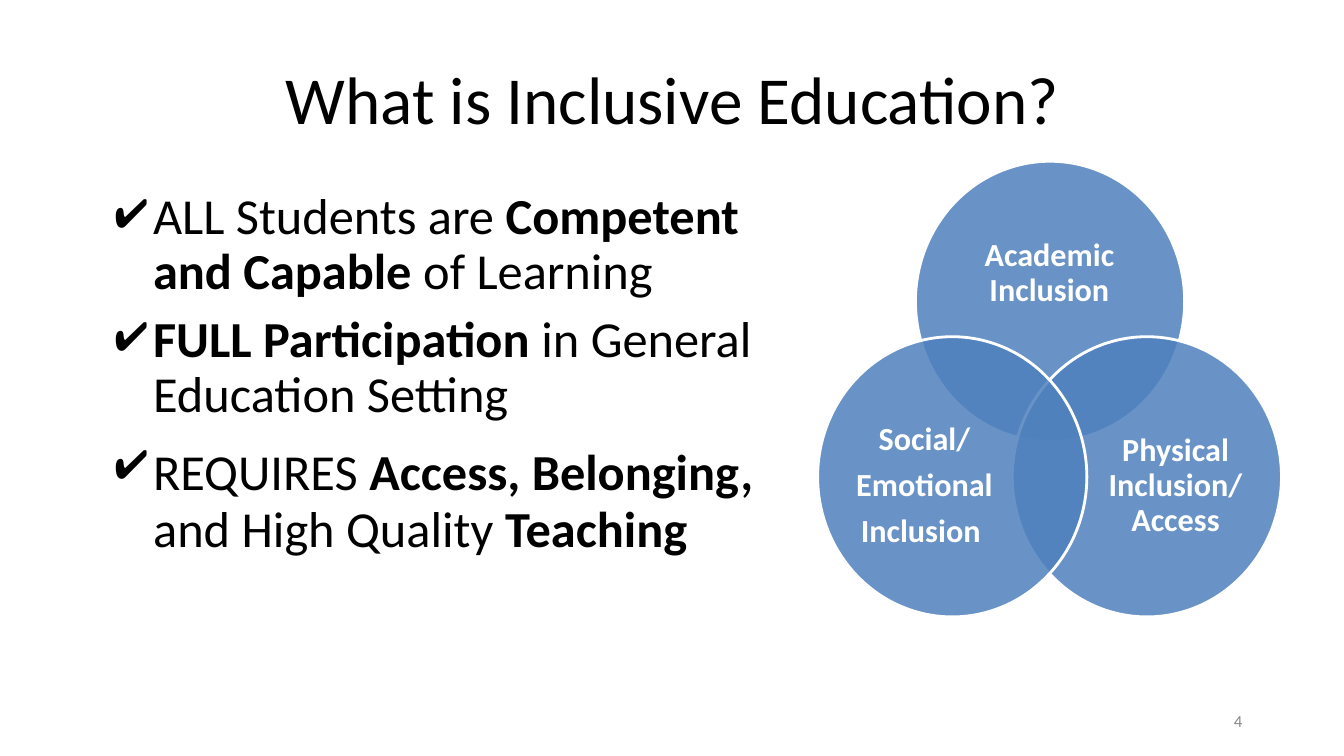
from lxml import etree
from pptx import Presentation
from pptx import util as u
from pptx.dml.color import RGBColor
from pptx.enum import shapes, text
from pptx.oxml.ns import qn

BLACK = RGBColor(0x00, 0x00, 0x00)
WHITE = RGBColor(0xFF, 0xFF, 0xFF)
BLUE = RGBColor(0x4F, 0x81, 0xBD)
GRAY = RGBColor(0x88, 0x88, 0x88)
FONT = "Calibri"
MID = text.MSO_ANCHOR.MIDDLE
CENTER = text.PP_ALIGN.CENTER

POINTS = [
    [("ALL Students are ", False), ("Competent and Capable ", True),
     ("of Learning", False)],
    [("FULL Participation ", True), ("in General Education Setting", False)],
    [("REQUIRES ", False), ("Access, Belonging", True), (",", False, 44),
     (" ", True), ("and High Quality ", False), ("Teaching", True)],
]
CIRCLES = [
    ((9.08, 1.6), (9.43, 2.09, 1.96, 1.25), ["Academic Inclusion"]),
    ((10.04, 3.34), (10.86, 4.06, 1.6, 1.53), ["Physical Inclusion/ Access"]),
    ((8.11, 3.34), (8.37, 4.06, 1.6, 1.53),
     ["Social/", "Emotional", "Inclusion "]),
]


def style(item, size, color, bold=None):
    item.font.name = FONT
    item.font.size = u.Pt(size)
    item.font.color.rgb = color
    item.font.bold = bold


def add_box(slide, area, anchor=MID):
    frame = slide.shapes.add_textbox(*map(u.Inches, area)).text_frame
    frame.word_wrap = True
    frame.vertical_anchor = anchor
    return frame


def fill_lines(frame, lines, size, color, align, bold=None, space=0.9, gap=0):
    for i, line in enumerate(lines):
        para = frame.add_paragraph() if i else frame.paragraphs[0]
        para.text = line
        para.alignment = align
        para.line_spacing = space
        para.space_before = u.Pt(gap if i else 0)
        style(para, size, color, bold)


def set_title(slide, words):
    title = slide.shapes.title
    title.left, title.top, title.width, title.height = map(
        u.Inches, (0.92, 0.29, 11.5, 1.45))
    title.text_frame.vertical_anchor = MID
    fill_lines(title.text_frame, [words], 48, BLACK, CENTER)


def add_circle(slide, spot, area, lines):
    size = (2.67, 2.78)
    disc = slide.shapes.add_shape(
        shapes.MSO_SHAPE.OVAL, *map(u.Inches, spot + size))
    disc.shadow.inherit = False
    disc.fill.solid()
    disc.fill.fore_color.rgb = BLUE
    tint = disc.fill._xPr.find(qn("a:solidFill"))[0]
    etree.SubElement(tint, qn("a:alpha"), val="85000")
    disc.line.color.rgb = WHITE
    disc.line.width = u.Pt(2)
    frame = add_box(slide, area)
    frame.margin_left = frame.margin_right = 0
    frame.margin_top = frame.margin_bottom = 0
    fill_lines(frame, lines, 23, WHITE, CENTER, bold=True, gap=8.1)


def add_check(para):
    props = para._p.get_or_add_pPr()
    props.set("marL", str(u.Inches(0.5)))
    props.set("indent", str(u.Inches(-0.38)))
    tone = etree.SubElement(props, qn("a:buClr"))
    etree.SubElement(tone, qn("a:srgbClr"), val=str(BLACK))
    etree.SubElement(props, qn("a:buChar"), char="✔")


def add_points(slide):
    frame = add_box(slide, (0.92, 1.85, 7.35, 4.76), text.MSO_ANCHOR.TOP)
    for i, parts in enumerate(POINTS):
        para = frame.add_paragraph() if i else frame.paragraphs[0]
        para.line_spacing = 0.9
        para.space_before = u.Pt(10)
        add_check(para)
        for words, bold, *size in parts:
            run = para.add_run()
            run.text = words
            style(run, size[0] if size else 36, BLACK, bold)


def main():
    deck = Presentation()
    deck.slide_width = u.Inches(13.33)
    deck.slide_height = u.Inches(7.5)
    slide = deck.slides.add_slide(deck.slide_layouts[5])
    set_title(slide, "What is Inclusive Education?")
    for spot, area, lines in CIRCLES:
        add_circle(slide, spot, area, lines)
    number = add_box(slide, (9.42, 6.95, 3, 0.4))
    fill_lines(number, ["4"], 12, GRAY, text.PP_ALIGN.RIGHT, space=1.0)
    add_points(slide)
    deck.save("out.pptx")


if __name__ == "__main__":
    main()
